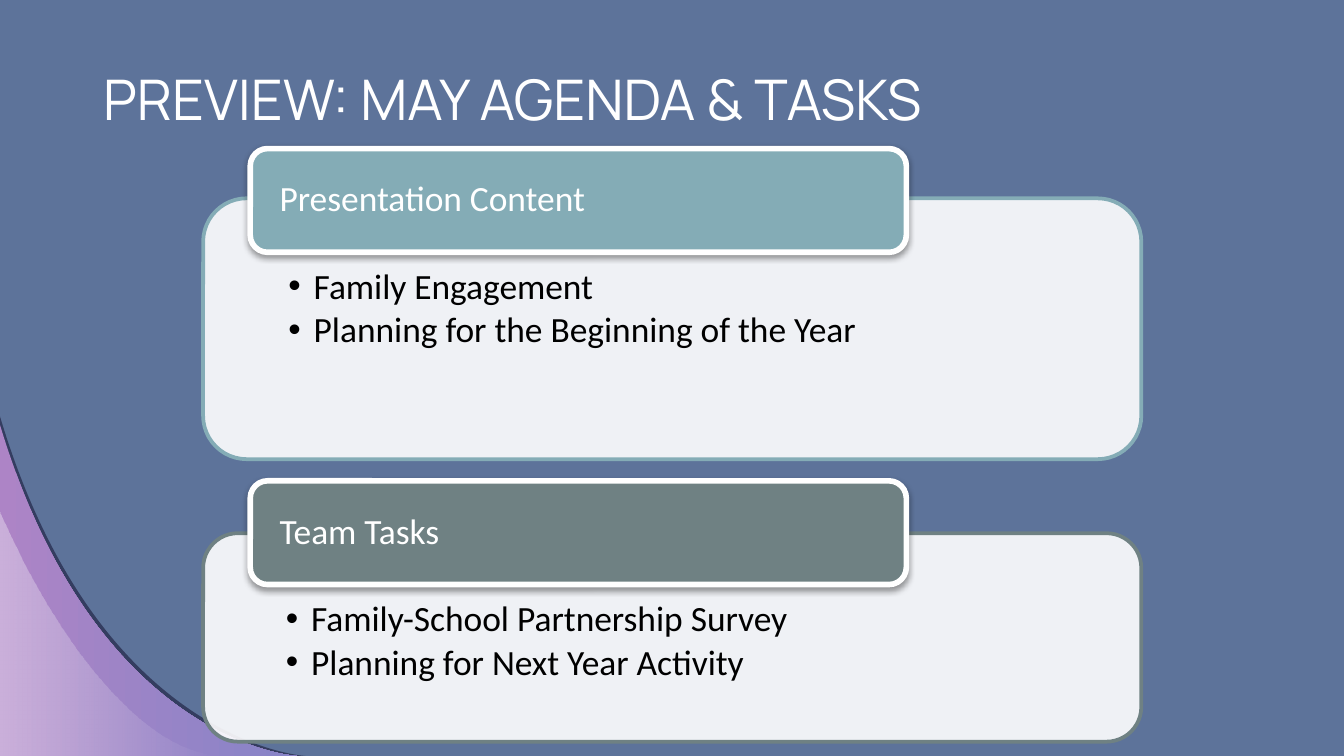
from lxml import etree
from pptx import Presentation
from pptx.dml.color import RGBColor
from pptx.enum.shapes import MSO_SHAPE as Preset
from pptx.enum.text import MSO_ANCHOR as Anchor, PP_ALIGN as Align
from pptx.oxml.ns import qn
from pptx.util import Cm, Pt

BACKGROUND = RGBColor(0x5D, 0x73, 0x9A)
WHITE = RGBColor(0xFF, 0xFF, 0xFF)
BLACK = RGBColor(0, 0, 0)
NAVY = RGBColor(0x12, 0x10, 0x2F)
LILAC = RGBColor(0xAD, 0x84, 0xC6)
PERIWINKLE = RGBColor(0x87, 0x84, 0xC7)
TEAL = RGBColor(0x84, 0xAC, 0xB6)
SLATE = RGBColor(0x6F, 0x81, 0x83)

SLIDE_WIDTH, SLIDE_HEIGHT = 25.4, 14.29
CARD_LEFT, CARD_WIDTH = 3.84, 17.73
HEADER_LEFT, HEADER_WIDTH, HEADER_HEIGHT = 4.73, 12.4, 1.96
BULLET_INDENT = Cm(0.48)

# heading, accent, header top, card top, card height, items
SECTIONS = [
    ("Presentation Content", TEAL, 2.81, 3.75, 4.93,
     ["Family Engagement", "Planning for the Beginning of the Year"]),
    ("Team Tasks", SLATE, 9.09, 10.08, 3.94,
     ["Family-School Partnership Survey", "Planning for Next Year Activity"]),
]


def add_child(parent, tag, **attributes):
    child = etree.SubElement(parent, qn(tag))
    for key, value in attributes.items():
        child.set(key, str(value))
    return child


def set_opacity(shape, *percents):
    """Give each fill colour, in order, its opacity."""
    colors = shape._element.spPr.xpath("./a:solidFill/a:srgbClr | ./a:gradFill//a:srgbClr")
    for color, percent in zip(colors, percents):
        add_child(color, "a:alpha", val=percent * 1000)


def fill_gradient(shape, left_color, right_color):
    shape.fill.gradient()
    shape.fill.gradient_angle = 0
    for stop, color in zip(shape.fill.gradient_stops, (left_color, right_color)):
        stop.color.rgb = color


def add_swoosh(slide, start_y, control_1, control_2, end_x):
    """Fill the lower left corner below a Bezier curve from the left edge to the bottom."""
    end = (end_x, SLIDE_HEIGHT)
    builder = slide.shapes.build_freeform(0, Cm(start_y), scale=1.0)
    builder.add_line_segments([(Cm(end_x), Cm(SLIDE_HEIGHT)), (0, Cm(SLIDE_HEIGHT))], close=True)
    swoosh = builder.convert_to_shape()

    first_side = swoosh._element.spPr.xpath(".//a:lnTo")[0]
    curve = etree.Element(qn("a:cubicBezTo"))
    for x, y in (control_1, control_2, end):
        add_child(curve, "a:pt", x=Cm(x), y=Cm(y) - Cm(start_y))
    first_side.getparent().replace(first_side, curve)

    swoosh.shadow.inherit = False
    swoosh.line.fill.background()
    return swoosh


def add_corner_art(slide):
    edge = add_swoosh(slide, 7.87, (1.85, 14.07), (5.77, SLIDE_HEIGHT), 5.77)
    edge.fill.solid()
    edge.fill.fore_color.rgb = NAVY
    set_opacity(edge, 54)

    band = add_swoosh(slide, 8.03, (1.83, 14.1), (5.61, SLIDE_HEIGHT), 5.61)
    fill_gradient(band, LILAC, PERIWINKLE)

    glow = add_swoosh(slide, 9.65, (0, 9.65), (1.75, 14), 4.11)
    fill_gradient(glow, WHITE, WHITE)
    set_opacity(glow, 36, 0)


def add_panel(slide, left, top, width, height, fill, outline, outline_width):
    panel = slide.shapes.add_shape(Preset.ROUNDED_RECTANGLE,
                                   Cm(left), Cm(top), Cm(width), Cm(height))
    panel.shadow.inherit = False
    panel.fill.solid()
    panel.fill.fore_color.rgb = fill
    panel.line.color.rgb = outline
    panel.line.width = Pt(outline_width)
    return panel


def set_frame(frame, anchor, left, top, right, bottom):
    frame.word_wrap = True
    frame.vertical_anchor = anchor
    frame.margin_left, frame.margin_top = Cm(left), Cm(top)
    frame.margin_right, frame.margin_bottom = Cm(right), Cm(bottom)


def style_paragraph(paragraph, font_name, size, color):
    paragraph.alignment = Align.LEFT
    paragraph.font.name = font_name
    paragraph.font.size = Pt(size)
    paragraph.font.color.rgb = color


def add_bullet(paragraph):
    properties = paragraph._p.get_or_add_pPr()
    properties.set("marL", str(BULLET_INDENT))
    properties.set("indent", str(-BULLET_INDENT))
    add_child(add_child(properties, "a:buClr"), "a:srgbClr", val=BLACK)
    add_child(properties, "a:buFont", typeface="Arial")
    add_child(properties, "a:buChar", char="•")


def add_card(slide, top, height, accent, items):
    card = add_panel(slide, CARD_LEFT, top, CARD_WIDTH, height, WHITE, accent, 2)
    set_opacity(card, 90)
    frame = card.text_frame
    set_frame(frame, Anchor.TOP, 1.37, 1.09, 1.37, 0.38)
    for index, item in enumerate(items):
        paragraph = frame.add_paragraph() if index else frame.paragraphs[0]
        paragraph.text = item
        add_bullet(paragraph)
        paragraph.line_spacing = 0.9
        paragraph.space_after = Pt(2.8)
        style_paragraph(paragraph, "Calibri", 19, BLACK)


def add_drop_shadow(shape):
    effects = shape._element.spPr.find(qn("a:effectLst"))
    shadow = add_child(effects, "a:outerShdw", blurRad=Pt(3.1), dist=Pt(1.6),
                       dir=90 * 60000, rotWithShape=0)
    add_child(add_child(shadow, "a:srgbClr", val=BLACK), "a:alpha", val=38000)


def add_header(slide, top, accent, heading):
    header = add_panel(slide, HEADER_LEFT, top, HEADER_WIDTH, HEADER_HEIGHT, accent, WHITE, 3)
    add_drop_shadow(header)
    set_frame(header.text_frame, Anchor.MIDDLE, 0.46, 0, 0.46, 0)
    paragraph = header.text_frame.paragraphs[0]
    paragraph.text = heading
    paragraph.line_spacing = 0.9
    style_paragraph(paragraph, "Calibri", 19, WHITE)


def add_title(slide, text):
    title = slide.shapes.add_textbox(Cm(1.7), Cm(0.98), Cm(21.39), Cm(1.75))
    set_frame(title.text_frame, Anchor.MIDDLE, 0.25, 0.25, 0.25, 0.25)
    paragraph = title.text_frame.paragraphs[0]
    paragraph.text = text
    style_paragraph(paragraph, "Manrope", 30, WHITE)


def main():
    presentation = Presentation()
    presentation.slide_width = Cm(SLIDE_WIDTH)
    presentation.slide_height = Cm(SLIDE_HEIGHT)
    slide = presentation.slides.add_slide(presentation.slide_layouts[6])
    slide.background.fill.solid()
    slide.background.fill.fore_color.rgb = BACKGROUND

    add_corner_art(slide)
    for heading, accent, header_top, card_top, card_height, items in SECTIONS:
        add_card(slide, card_top, card_height, accent, items)
        add_header(slide, header_top, accent, heading)
    add_title(slide, "PREVIEW: MAY AGENDA & TASKS")
    presentation.save("out.pptx")


if __name__ == "__main__":
    main()
